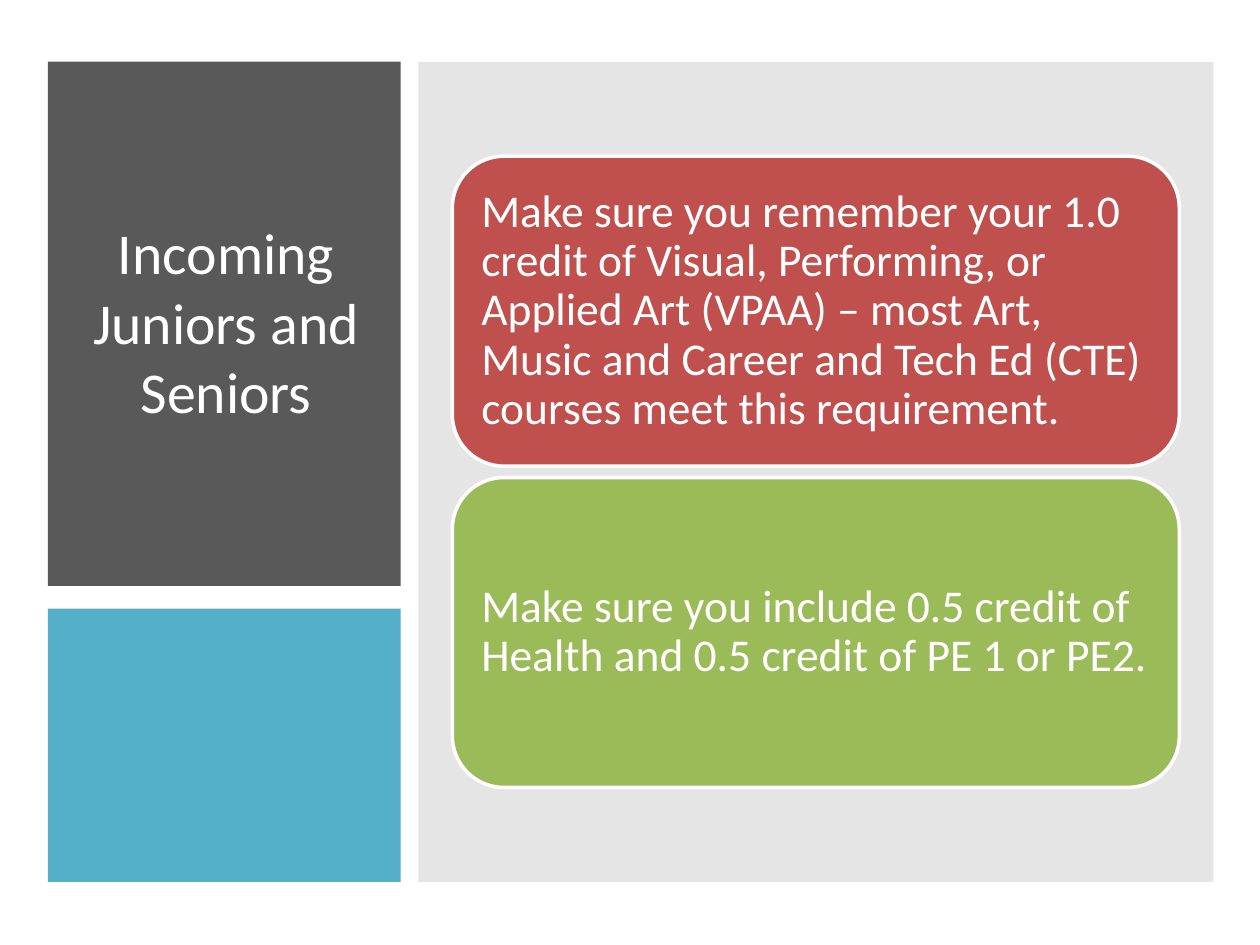
from dataclasses import dataclass

from lxml.etree import SubElement
from pptx import Presentation
from pptx.dml.color import RGBColor
from pptx.enum.shapes import MSO_SHAPE
from pptx.enum.text import MSO_ANCHOR, PP_ALIGN
from pptx.oxml.ns import qn
from pptx.util import Inches, Pt

SLIDE_WIDTH, SLIDE_HEIGHT = 10, 7.5
FONT = "Calibri"
WHITE = "FFFFFF"
TITLE = "Incoming Juniors and Seniors"
REMINDERS = [
    ("C0504D", "Make sure you remember your 1.0 credit of Visual, Performing, or "
               "Applied Art (VPAA) – most Art, Music and Career and Tech Ed (CTE) "
               "courses meet this requirement."),
    ("9BBB59", "Make sure you include 0.5 credit of Health and 0.5 credit of "
               "PE 1 or PE2."),
]


@dataclass
class Box:
    left: float
    top: float
    width: float
    height: float

    def inner(self, left, top, width, height):
        return Box(self.left + left * self.width, self.top + top * self.height,
                   width * self.width, height * self.height)

    def inches(self):
        return [Inches(value) for value in
                (self.left, self.top, self.width, self.height)]


def color(hex_string):
    return RGBColor.from_string(hex_string)


def add_block(slide, box, fill, opacity=100, preset=MSO_SHAPE.RECTANGLE):
    shape = slide.shapes.add_shape(preset, *box.inches())
    shape.shadow.inherit = False
    shape.fill.solid()
    shape.fill.fore_color.rgb = color(fill)
    shape.line.fill.background()
    if opacity < 100:
        solid_color = shape.element.find(".//" + qn("a:srgbClr"))
        SubElement(solid_color, qn("a:alpha"), val=str(opacity * 1000))
    return shape


def write_text(shape, text, size, alignment):
    frame = shape.text_frame
    frame.word_wrap = True
    frame.vertical_anchor = MSO_ANCHOR.MIDDLE
    paragraph = frame.paragraphs[0]
    paragraph.text = text
    paragraph.alignment = alignment
    paragraph.font.name = FONT
    paragraph.font.size = Pt(size)
    paragraph.font.color.rgb = color(WHITE)
    return paragraph


def add_title_panel(slide, box):
    add_block(slide, box, "595959")
    title_box = box.inner(0.09, 0.07, 0.83, 0.85)
    title = slide.shapes.add_textbox(*title_box.inches())
    write_text(title, TITLE, 33, PP_ALIGN.CENTER)


def add_card(slide, box, fill, text):
    card = add_block(slide, box, fill, preset=MSO_SHAPE.ROUNDED_RECTANGLE)
    card.line.color.rgb = color(WHITE)
    card.line.width = Pt(2)
    frame = card.text_frame
    frame.margin_left = frame.margin_right = Inches(0.11)
    frame.margin_top = frame.margin_bottom = Inches(0.11)
    paragraph = write_text(card, text, 26, PP_ALIGN.LEFT)
    paragraph.line_spacing = 0.9


def add_reminder_panel(slide, box):
    add_block(slide, box, "808080", opacity=20)
    margin_x, margin_y, gap = 0.27, 0.75, 0.09
    count = len(REMINDERS)
    card_width = box.width - 2 * margin_x
    card_height = (box.height - 2 * margin_y - (count - 1) * gap) / count
    for row, (fill, text) in enumerate(REMINDERS):
        top = box.top + margin_y + row * (card_height + gap)
        card_box = Box(box.left + margin_x, top, card_width, card_height)
        add_card(slide, card_box, fill, text)


def main():
    presentation = Presentation()
    presentation.slide_width = Inches(SLIDE_WIDTH)
    presentation.slide_height = Inches(SLIDE_HEIGHT)
    slide = presentation.slides.add_slide(presentation.slide_layouts[6])

    add_title_panel(slide, Box(0.38, 0.49, 2.8, 4.16))
    add_block(slide, Box(0.38, 4.83, 2.8, 2.17), "4BACC6", opacity=95)
    add_reminder_panel(slide, Box(3.32, 0.49, 6.31, 6.51))

    presentation.save("out.pptx")


if __name__ == "__main__":
    main()
